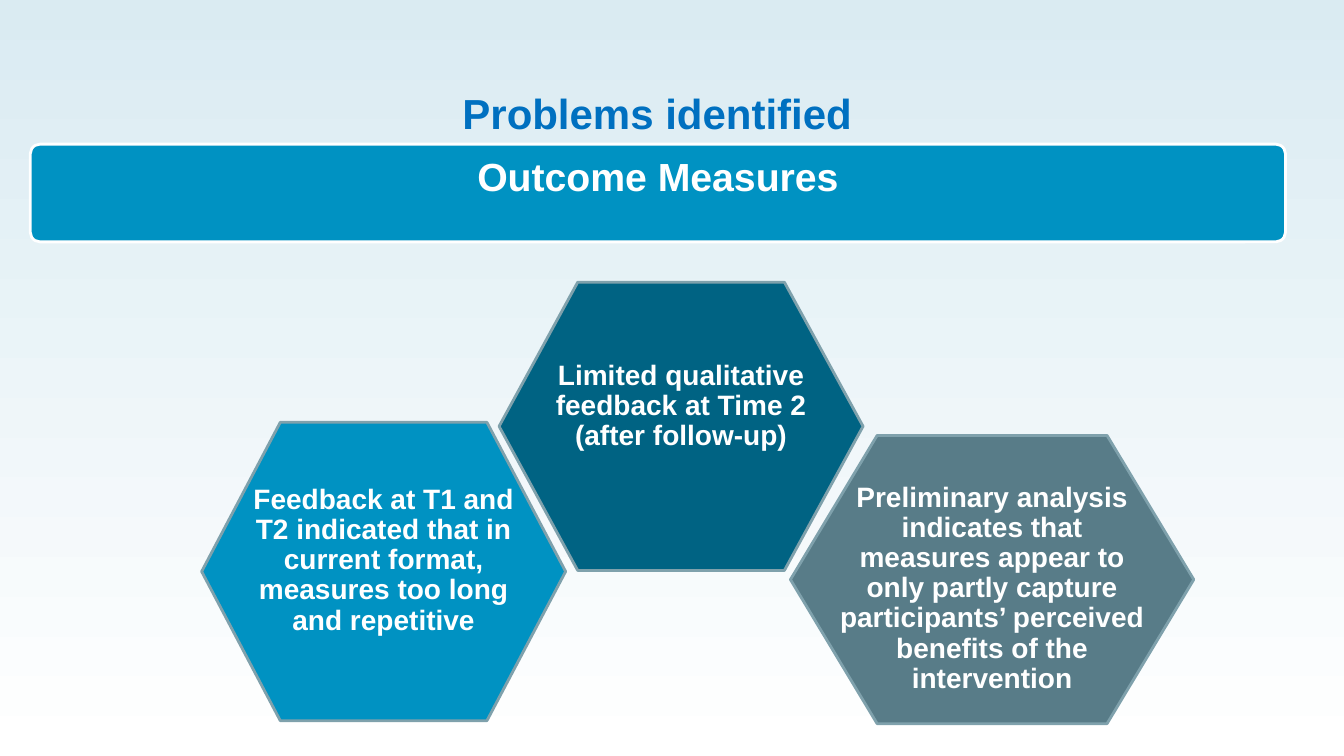
from pptx import Presentation
from pptx.dml.color import RGBColor
from pptx.enum import shapes, text
from pptx.util import Inches, Pt

BACKGROUND = ("DAEBF2", "FFFFFF")
TITLE = ("Problems identified", 30, "0070C0", (0.33, 0.82, 12.38, 0.61))
BANNER = ("Outcome Measures", 28, "FFFFFF", (0.3, 1.43, 12.45, 0.97))
BANNER_FILL = "0092C2"
PROBLEMS = [
    {"wording": "Limited qualitative feedback at Time 2 (after follow-up)",
     "place": (4.95, 2.8, 3.61, 2.86), "shoulder": 0.78, "fill": "006383", "drop": -0.2},
    {"wording": "Preliminary analysis indicates that measures appear to only partly "
                "capture participants’ perceived benefits of the intervention",
     "place": (7.84, 4.32, 4, 2.86), "shoulder": 0.86, "fill": "587C88", "drop": 0.09},
    {"wording": "Feedback at T1 and T2 indicated that in current format, "
                "measures too long and repetitive",
     "place": (2, 4.19, 3.61, 2.96), "shoulder": 0.78, "fill": "0092C2", "drop": -0.11},
]
HEXAGON_LINE = "7FA1AC"
SIDE_INSET, END_INSET = 0.43, 0.25


def color(hex_code):
    return RGBColor.from_string(hex_code)


def paint(shape, fill, line):
    shape.shadow.inherit = False
    shape.fill.solid()
    shape.fill.fore_color.rgb = color(fill)
    shape.line.color.rgb = color(line)
    shape.line.width = Pt(2)


def write(shape, wording, size, ink, anchor=text.MSO_ANCHOR.TOP, spacing=1.0):
    frame = shape.text_frame
    frame.word_wrap = True
    frame.vertical_anchor = anchor
    paragraph = frame.paragraphs[0]
    paragraph.alignment = text.PP_ALIGN.CENTER
    paragraph.line_spacing = spacing
    run = paragraph.add_run()
    run.text = wording
    run.font.name = "Arial"
    run.font.size = Pt(size)
    run.font.bold = True
    run.font.color.rgb = color(ink)


def add_hexagon(slide, wording, place, shoulder, fill, drop):
    left, top, width, height = place
    right, bottom, middle = left + width, top + height, top + height / 2
    corners = [(left + shoulder, top), (right - shoulder, top), (right, middle),
               (right - shoulder, bottom), (left + shoulder, bottom)]
    outline = slide.shapes.build_freeform(Inches(left), Inches(middle))
    outline.add_line_segments([(Inches(x), Inches(y)) for x, y in corners], close=True)
    hexagon = outline.convert_to_shape()
    paint(hexagon, fill, HEXAGON_LINE)
    frame = hexagon.text_frame
    frame.margin_left = frame.margin_right = Inches(SIDE_INSET)
    frame.margin_top = Inches(END_INSET + drop)
    frame.margin_bottom = Inches(END_INSET - drop)
    write(hexagon, wording, 20, "FFFFFF", text.MSO_ANCHOR.MIDDLE, 0.9)


def main():
    deck = Presentation()
    deck.slide_width, deck.slide_height = Inches(13.33), Inches(7.5)
    slide = deck.slides.add_slide(deck.slide_layouts[6])

    backdrop = slide.background.fill
    backdrop.gradient()
    backdrop.gradient_angle = 270
    for stop, shade in zip(backdrop.gradient_stops, BACKGROUND):
        stop.color.rgb = color(shade)

    wording, size, ink, place = BANNER
    banner = slide.shapes.add_shape(shapes.MSO_SHAPE.ROUNDED_RECTANGLE, *map(Inches, place))
    banner.adjustments[0] = 0.1
    paint(banner, BANNER_FILL, "FFFFFF")
    write(banner, wording, size, ink)

    wording, size, ink, place = TITLE
    title = slide.shapes.add_textbox(*map(Inches, place))
    write(title, wording, size, ink)

    for problem in PROBLEMS:
        add_hexagon(slide, **problem)

    deck.save("out.pptx")


if __name__ == "__main__":
    main()
